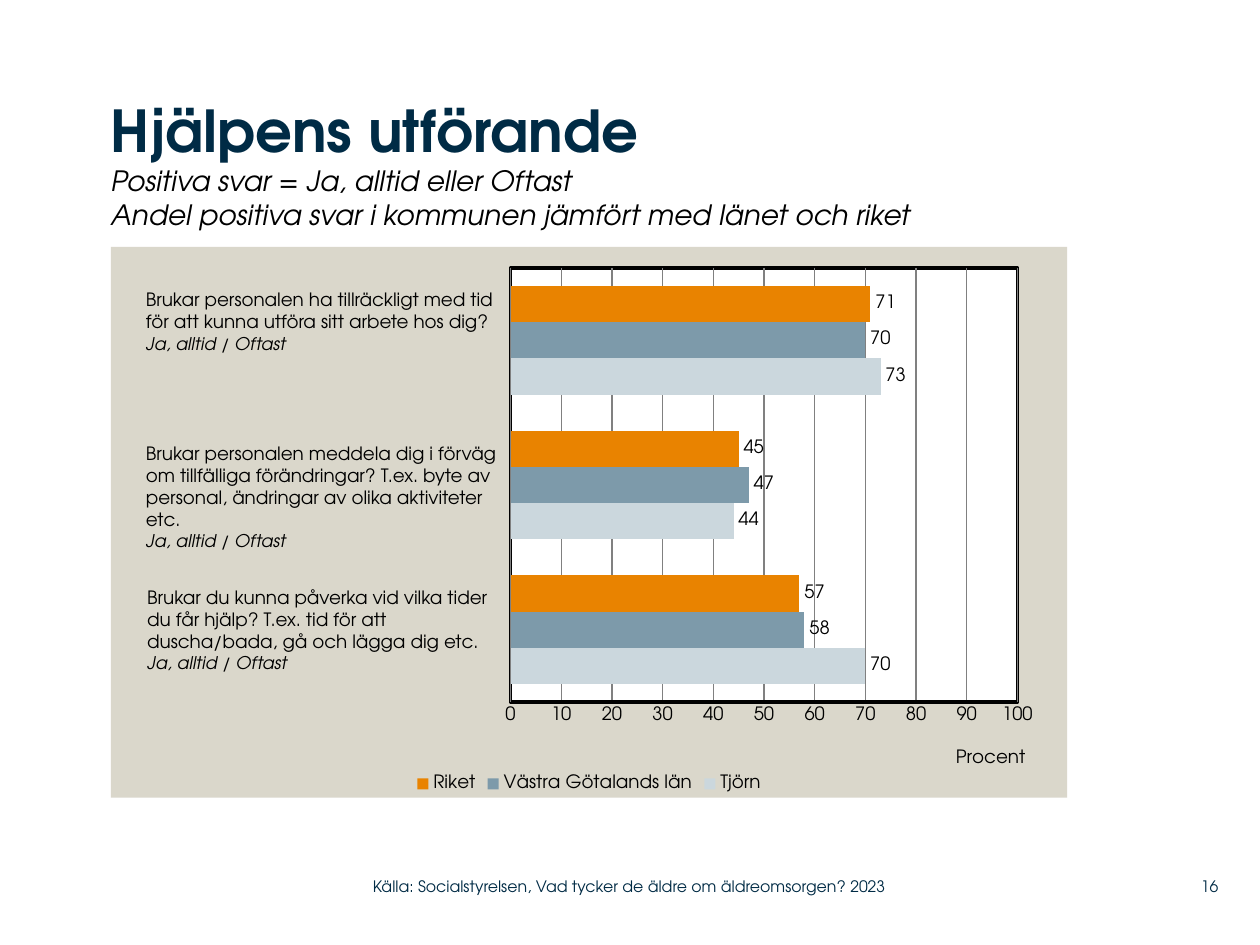
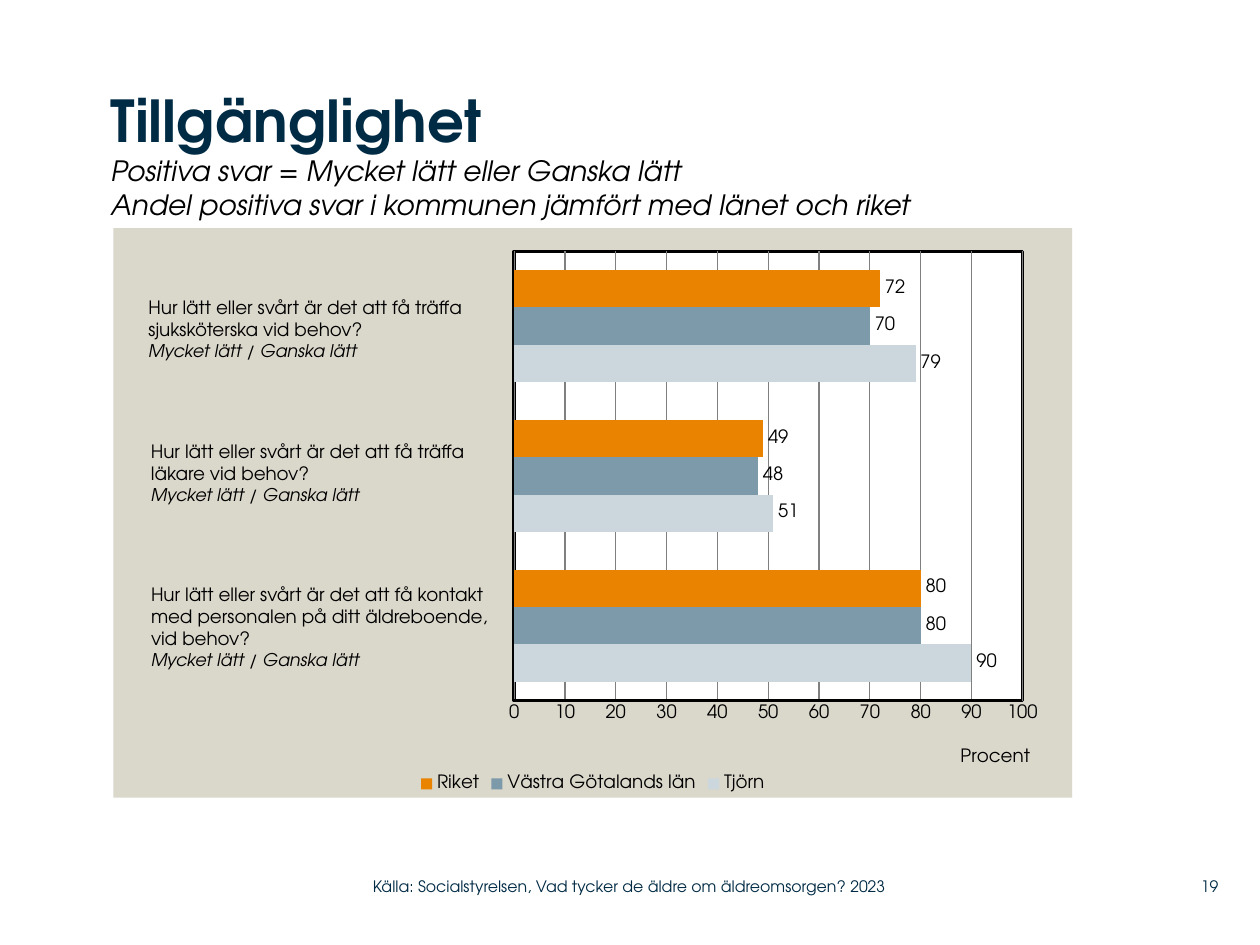
from lxml import etree
from pptx import Presentation
from pptx.chart.data import CategoryChartData
from pptx.dml.color import RGBColor
from pptx.enum.chart import XL_CHART_TYPE, XL_LABEL_POSITION, XL_LEGEND_POSITION, XL_TICK_MARK
from pptx.enum.text import MSO_ANCHOR, PP_ALIGN
from pptx.oxml import parse_xml
from pptx.oxml.ns import nsdecls, qn
from pptx.util import Inches, Pt

BAR = XL_CHART_TYPE.BAR_CLUSTERED
OUTSIDE = XL_LABEL_POSITION.OUTSIDE_END
BOTTOM = XL_LEGEND_POSITION.BOTTOM
NO_TICK = XL_TICK_MARK.NONE
TOP, MIDDLE = MSO_ANCHOR.TOP, MSO_ANCHOR.MIDDLE
LEFT, RIGHT = PP_ALIGN.LEFT, PP_ALIGN.RIGHT

FONT = "TeX Gyre Adventor"
COLORS = {"navy": "002B45", "black": "000000", "white": "FFFFFF", "panel": "DAD7CB",
          "grid": "808080", "Tjörn": "CBD7DD", "Västra Götalands län": "7D9AAA",
          "Riket": "E98300"}
SOURCE = "Källa: Socialstyrelsen, Vad tycker de äldre om äldreomsorgen? 2023"
COMPARISON = "Andel positiva svar i kommunen jämfört med länet och riket"


def rgb(name):
    return RGBColor.from_string(COLORS[name])


def set_layout(parent, index, target=None, **box):
    """Place a chart part by fractions of the chart area."""
    for old in parent.findall(qn("c:layout")):
        parent.remove(old)
    layout = etree.Element(qn("c:layout"))
    manual = etree.SubElement(layout, qn("c:manualLayout"))
    if target:
        etree.SubElement(manual, qn("c:layoutTarget")).set("val", target)
    for mode in ("xMode", "yMode"):
        etree.SubElement(manual, qn("c:" + mode)).set("val", "edge")
    for key, value in box.items():
        etree.SubElement(manual, qn("c:" + key)).set("val", str(value))
    parent.insert(index, layout)


def area_style(fill, line=None):
    stroke = (f'<a:ln w="{Pt(2)}"><a:solidFill><a:srgbClr val="{COLORS[line]}"/></a:solidFill></a:ln>'
              if line else "<a:ln><a:noFill/></a:ln>")
    return parse_xml(f'<c:spPr {nsdecls("c", "a")}><a:solidFill><a:srgbClr val="{COLORS[fill]}"/>'
                     f'</a:solidFill>{stroke}</c:spPr>')


class Deck:
    def __init__(self):
        self.prs = Presentation()
        self.prs.slide_width, self.prs.slide_height = Inches(10), Inches(7.5)
        self.s = None

    def style(self, font, size, color="black", bold=False, italic=False):
        font.name, font.size, font.bold, font.italic = FONT, Pt(size), bold, italic
        font.color.rgb = rgb(color)

    def text(self, box, lines, inset=0, anchor=TOP, align=LEFT):
        """Each line is (text, size, color, bold, italic)."""
        tf = self.s.shapes.add_textbox(*(Inches(v) for v in box)).text_frame
        tf.word_wrap, tf.vertical_anchor = True, anchor
        tf.margin_left = tf.margin_right = Inches(inset)
        tf.margin_top = tf.margin_bottom = Inches(inset / 2)
        for i, (text, *look) in enumerate(lines):
            p = tf.add_paragraph() if i else tf.paragraphs[0]
            p.text, p.alignment = text, align
            self.style(p.runs[0].font, *look)

    def slide(self, number):
        self.s = self.prs.slides.add_slide(self.prs.slide_layouts[6])
        # Footer: page number and source
        self.text((9.2, 6.89, 0.47, 0.29), [(str(number), 9, "navy")], anchor=MIDDLE, align=RIGHT)
        self.text((2.96, 6.89, 4.43, 0.29), [(SOURCE, 9, "navy")], anchor=MIDDLE)

    def title(self, top, heading, positive):
        lines = [(heading, 33, "navy", True)]
        lines += [(t, 16, "black", False, True) for t in (positive, COMPARISON)]
        self.text((0.88, top, 7.79, 1.15), lines)

    def question(self, box, lines, answer):
        self.text(box, [(t, 10.5) for t in lines] + [(answer, 10, "black", False, True)], inset=0.1)

    def chart(self, box, plot_top, series):
        data = CategoryChartData()
        data.categories = ["1", "2", "3"]
        for name, values in series.items():
            data.add_series(name, values)
        chart = self.s.shapes.add_chart(BAR, *(Inches(v) for v in box), data).chart
        self.style(chart.font, 10.5)
        chart.has_title = False
        chart.has_legend = True
        chart.legend.position, chart.legend.include_in_layout = BOTTOM, False
        self.style(chart.legend.font, 10.5)

        # Bars and values
        plot = chart.plots[0]
        plot.gap_width, plot.overlap, plot.vary_by_categories = 100, 0, False
        for ser in plot.series:
            ser.format.fill.solid()
            ser.format.fill.fore_color.rgb = rgb(ser.name)
            labels = ser.data_labels
            labels.show_value, labels.position = True, OUTSIDE
            self.style(labels.font, 10.5)

        # Axes
        chart.category_axis.visible = False
        axis = chart.value_axis
        axis.minimum_scale, axis.maximum_scale, axis.major_unit = 0, 100, 10
        axis.major_tick_mark = axis.minor_tick_mark = NO_TICK
        self.style(axis.tick_labels.font, 10.5)
        for line, color, width in ((axis.format.line, "black", 2),
                                   (axis.major_gridlines.format.line, "grid", 0.75)):
            line.color.rgb, line.width = rgb(color), Pt(width)
        p = axis.axis_title.text_frame.paragraphs[0]
        p.text = "Procent"
        self.style(p.runs[0].font, 10.5)
        set_layout(axis.axis_title._element, 1, x=0.88, y=0.905)

        # Panel and plot background
        space = chart._chartSpace
        space.find(qn("c:txPr")).addprevious(area_style("panel"))
        area = space.chart.plotArea
        set_layout(area, 0, "inner", x=0.418, y=plot_top, w=0.53, h=0.789)
        area.append(area_style("white", "black"))


SLIDES = [
    {"number": 16, "heading": "Hjälpens utförande", "title_top": 0.75,
     "positive": "Positiva svar = Ja, alltid eller Oftast", "answer": "Ja, alltid / Oftast",
     "chart": (0.88, 1.96, 7.59, 4.37), "plot_top": 0.038,
     "series": {"Tjörn": (70, 44, 73), "Västra Götalands län": (58, 47, 70),
                "Riket": (57, 45, 71)},
     "questions": [
         ((1.06, 2.24, 2.97, 0.81), ["Brukar personalen ha tillräckligt med tid",
                                     "för att kunna utföra sitt arbete hos dig?"]),
         ((1.06, 3.46, 2.99, 0.98), ["Brukar personalen meddela dig i förväg om tillfälliga "
                                     "förändringar? T.ex. byte av personal, ändringar av "
                                     "olika aktiviteter etc."]),
         ((1.07, 4.6, 2.97, 0.81), ["Brukar du kunna påverka vid vilka tider",
                                    "du får hjälp? T.ex. tid för att",
                                    "duscha/bada, gå och lägga dig etc."])]},
    {"number": 19, "heading": "Tillgänglighet", "title_top": 0.67,
     "positive": "Positiva svar = Mycket lätt eller Ganska lätt",
     "answer": "Mycket lätt / Ganska lätt",
     "chart": (0.9, 1.81, 7.61, 4.52), "plot_top": 0.041,
     "series": {"Tjörn": (90, 51, 79), "Västra Götalands län": (80, 48, 70),
                "Riket": (80, 49, 72)},
     "questions": [
         ((1.08, 2.3, 2.99, 0.81), ["Hur lätt eller svårt är det att få träffa "
                                    "sjuksköterska vid behov?"]),
         ((1.1, 3.44, 2.93, 0.81), ["Hur lätt eller svårt är det att få träffa",
                                    "läkare vid behov?"]),
         ((1.1, 4.58, 3.01, 0.98), ["Hur lätt eller svårt är det att få kontakt",
                                    "med personalen på ditt äldreboende,",
                                    "vid behov?"])]},
]


def main():
    deck = Deck()
    for page in SLIDES:
        deck.slide(page["number"])
        deck.chart(page["chart"], page["plot_top"], page["series"])
        deck.title(page["title_top"], page["heading"], page["positive"])
        for box, lines in page["questions"]:
            deck.question(box, lines, page["answer"])
    deck.prs.save("out.pptx")


if __name__ == "__main__":
    main()
